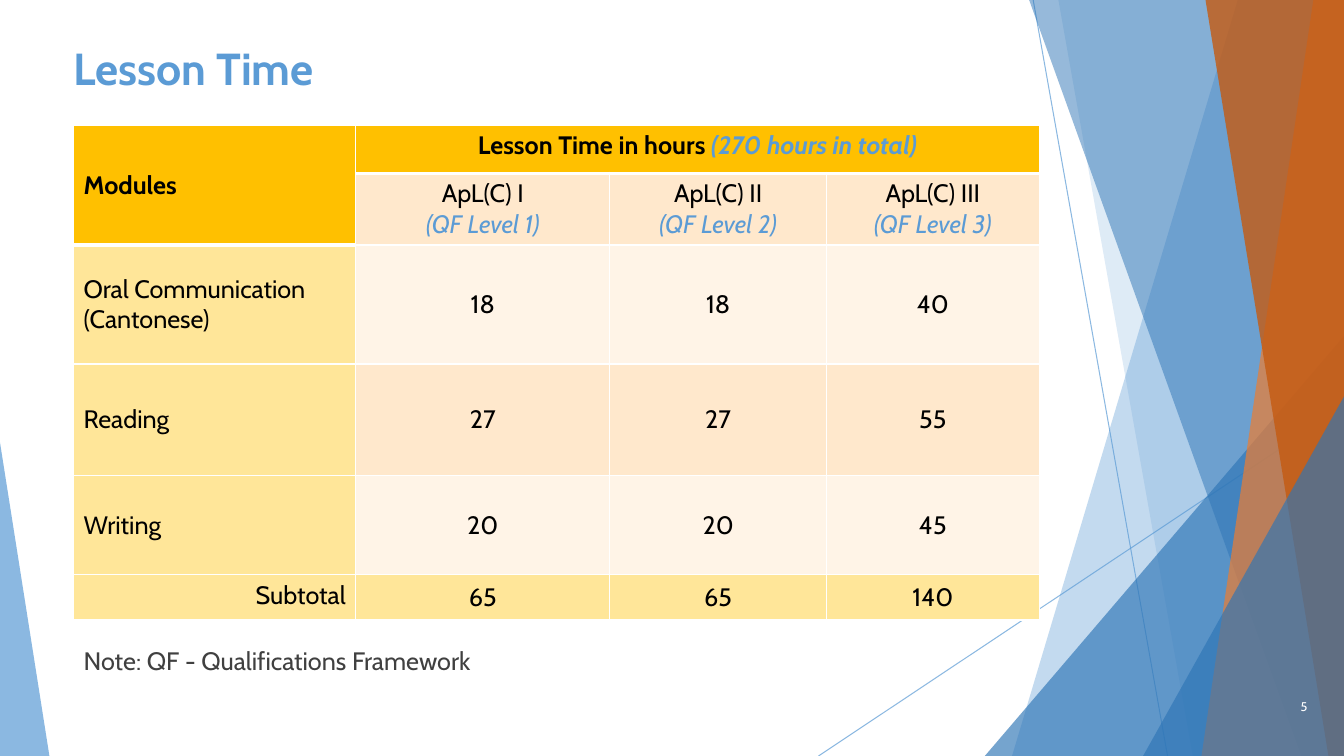
import dataclasses

import pptx
import pptx.dml.color
import pptx.enum.shapes
import pptx.enum.text
import pptx.oxml
import pptx.oxml.ns
import pptx.util
from lxml import etree

ALIGN = pptx.enum.text.PP_ALIGN
ANCHOR = pptx.enum.text.MSO_ANCHOR
COLUMNS, ROWS = 160, 90
UNIT = pptx.util.Inches(7.5) // ROWS


@dataclasses.dataclass(frozen=True)
class Theme:
    font: str = "Cabin"
    blue: str = "5B9BD5"
    deep_blue: str = "2E75B6"
    orange: str = "ED7D31"
    rust: str = "C55A11"
    black: str = "000000"
    grey: str = "404040"
    white: str = "FFFFFF"
    gold: str = "FFC000"
    pale_gold: str = "FFE699"
    peach: str = "FFE8CC"
    cream: str = "FFF4E7"
    title_size: int = 32
    text_size: int = 18
    number_size: int = 9
    thin: float = 1
    thick: float = 3
    hairline: float = 0.75


@dataclasses.dataclass(frozen=True)
class Box:
    left: float
    top: float
    width: float
    height: float

    def point(self, x, y):
        return grid(self.left + x), grid(self.top + y)

    def frame(self):
        return tuple(map(grid, dataclasses.astuple(self)))


THEME = Theme()


def grid(cells):
    return pptx.util.Emu(round(cells * UNIT))


def rgb(color):
    return pptx.dml.color.RGBColor.from_string(color)


def add_span(para, text, size, color, bold=False, italic=False):
    span = para.add_run()
    span.text = text
    font = span.font
    font.name, font.size, font.bold, font.italic = THEME.font, pptx.util.Pt(size), bold, italic
    font.color.rgb = rgb(color)


def set_opacity(shape, percent):
    for color in shape._element.spPr.iter(pptx.oxml.ns.qn("a:srgbClr")):
        etree.SubElement(color, pptx.oxml.ns.qn("a:alpha"), val=str(percent * 1000))


def paint(shape, color, opacity):
    shape.shadow.inherit = False
    shape.fill.solid()
    shape.fill.fore_color.rgb = rgb(color)
    shape.line.fill.background()
    set_opacity(shape, opacity)


def add_ray(page, box, start, end):
    ray = page.shapes.add_connector(
        pptx.enum.shapes.MSO_CONNECTOR.STRAIGHT, *box.point(*start), *box.point(*end))
    ray.line.color.rgb = rgb(THEME.blue)
    ray.line.width = pptx.util.Pt(THEME.hairline)
    set_opacity(ray, 70)
    etree.SubElement(ray._element.spPr, pptx.oxml.ns.qn("a:effectLst"))


def add_band(page, box, top_x, bottom_x, color, opacity):
    builder = page.shapes.build_freeform(*box.point(top_x, 0))
    corners = [(box.width, 0), (box.width, box.height), (bottom_x, box.height)]
    builder.add_line_segments([box.point(*corner) for corner in corners], close=True)
    paint(builder.convert_to_shape(), color, opacity)


def add_wedge(page, box, apex, color, opacity):
    wedge = page.shapes.add_shape(
        pptx.enum.shapes.MSO_SHAPE.ISOSCELES_TRIANGLE, *box.frame())
    wedge.adjustments[0] = apex
    paint(wedge, color, opacity)


def add_corner_wedge(page, box, x, y):
    corner = Box(box.left + x, box.top + y, box.width - x, box.height - y)
    add_wedge(page, corner, 1, THEME.deep_blue, 66)


def add_facets(page, box):
    add_ray(page, box, (27, 0), (43, box.height))
    add_ray(page, box, (box.width, 48.36), (1.44, box.height))
    add_band(page, box, 51.36, 24.48, THEME.blue, 36)
    add_band(page, box, 30, 46, THEME.blue, 20)
    add_corner_wedge(page, box, 21.24, 40)
    add_band(page, box, 26.52, 58.92, THEME.deep_blue, 50)
    add_band(page, box, 60.36, 47.04, THEME.orange, 70)
    add_band(page, box, 47.52, 62.16, THEME.rust, 80)
    add_corner_wedge(page, box, 40.08, 47.2)


def place_text(shape, box, anchor):
    shape.left, shape.top, shape.width, shape.height = box.frame()
    frame = shape.text_frame
    frame.word_wrap = True
    frame.auto_size = pptx.enum.text.MSO_AUTO_SIZE.NONE
    frame.vertical_anchor = anchor
    return frame.paragraphs[0]


def add_title(page, box):
    para = place_text(page.shapes.title, box, ANCHOR.TOP)
    para.alignment = ALIGN.LEFT
    add_span(para, "Lesson Time", THEME.title_size, THEME.blue, bold=True)


def add_note(page, box):
    para = place_text(page.placeholders[1], box, ANCHOR.TOP)
    properties = para._p.get_or_add_pPr()
    properties.set("marL", "0")
    properties.set("indent", "0")
    etree.SubElement(properties, pptx.oxml.ns.qn("a:buNone"))
    para.space_before = pptx.util.Pt(0)
    add_span(para, "Note: QF - Qualifications Framework", THEME.text_size, THEME.grey)


def add_page_number(page, box):
    para = place_text(page.shapes.add_textbox(*box.frame()), box, ANCHOR.MIDDLE)
    para.alignment = ALIGN.RIGHT
    add_span(para, "5", THEME.number_size, THEME.white)


def edge_width(row, column):
    return THEME.thick if row == (1 if column == 0 else 0) else THEME.thin


def style_cell(cell, row, column, color):
    properties = cell._tc.get_or_add_tcPr()
    below, above = edge_width(row, column), edge_width(row - 1, column)
    for side, width in zip("LRTB", (THEME.thin, THEME.thin, above, below)):
        properties.append(pptx.oxml.parse_xml(
            f'<a:ln{side} {pptx.oxml.ns.nsdecls("a")} w="{pptx.util.Pt(width)}">'
            f'<a:solidFill><a:srgbClr val="{THEME.white}"/></a:solidFill></a:ln{side}>'))
    cell.fill.solid()
    cell.fill.fore_color.rgb = rgb(color)


def fill_cell(cell, lines, alignment, anchor, bold=False):
    cell.vertical_anchor = anchor
    frame = cell.text_frame
    for index, spans in enumerate(lines):
        para = frame.add_paragraph() if index else frame.paragraphs[0]
        para.alignment = alignment
        for text in spans:
            accent = text.startswith("(QF") or text.startswith("(270")
            color = THEME.blue if accent else THEME.black
            add_span(para, text, THEME.text_size, color, bold, accent)


def add_lesson_table(page, box):
    widths = [33.6, 30.24, 25.8, 25.32]
    heights = [5.76, 8.4, 14.16, 13.32, 11.76, 5.4]
    modules = [(["Oral Communication", "(Cantonese)"], 18, 18, 40),
               (["Reading"], 27, 27, 55),
               (["Writing"], 20, 20, 45),
               (["Subtotal"], 65, 65, 140)]
    row_colors = [THEME.gold, THEME.peach, THEME.cream, THEME.peach, THEME.cream, THEME.pale_gold]
    table = page.shapes.add_table(len(heights), len(widths), *box.frame()).table
    for column, width in zip(table.columns, widths):
        column.width = grid(width)
    for row, height in zip(table.rows, heights):
        row.height = grid(height)
    for row, color in enumerate(row_colors):
        for column in range(len(widths)):
            label_color = THEME.gold if row < 2 else THEME.pale_gold
            style_cell(table.cell(row, column), row, column, color if column else label_color)
    table.cell(0, 0).merge(table.cell(1, 0))
    table.cell(0, 1).merge(table.cell(0, 3))
    fill_cell(table.cell(0, 0), [["Modules"]], ALIGN.LEFT, ANCHOR.MIDDLE, True)
    fill_cell(table.cell(0, 1), [["Lesson Time in hours ", "(270 hours in total)"]],
              ALIGN.CENTER, ANCHOR.TOP, True)
    for level, numeral in enumerate(["I", "II", "III"], 1):
        fill_cell(table.cell(1, level), [[f"ApL(C) {numeral}"], [f"(QF Level {level})"]],
                  ALIGN.CENTER, ANCHOR.TOP)
    for row, (label, *hours) in enumerate(modules, 2):
        total = label == ["Subtotal"]
        fill_cell(table.cell(row, 0), [[line] for line in label],
                  ALIGN.RIGHT if total else ALIGN.LEFT, ANCHOR.TOP if total else ANCHOR.MIDDLE)
        for column, value in enumerate(hours, 1):
            fill_cell(table.cell(row, column), [[str(value)]], ALIGN.CENTER, ANCHOR.MIDDLE)


def main():
    deck = pptx.Presentation()
    deck.slide_width, deck.slide_height = grid(COLUMNS), grid(ROWS)
    page = deck.slides.add_slide(deck.slide_layouts[1])
    add_facets(page, Box(96, 0, 64, ROWS))
    add_wedge(page, Box(0, 52.68, 5.88, 37.32), 0, THEME.blue, 70)
    add_title(page, Box(7.56, 4.2, 112.8, 17.28))
    add_lesson_table(page, Box(8.76, 14.88, 114.96, 58.8))
    add_note(page, Box(8.76, 76.2, 112.8, 4.8))
    add_page_number(page, Box(147.84, 81.72, 9, 4.8))
    deck.save("out.pptx")


if __name__ == "__main__":
    main()
